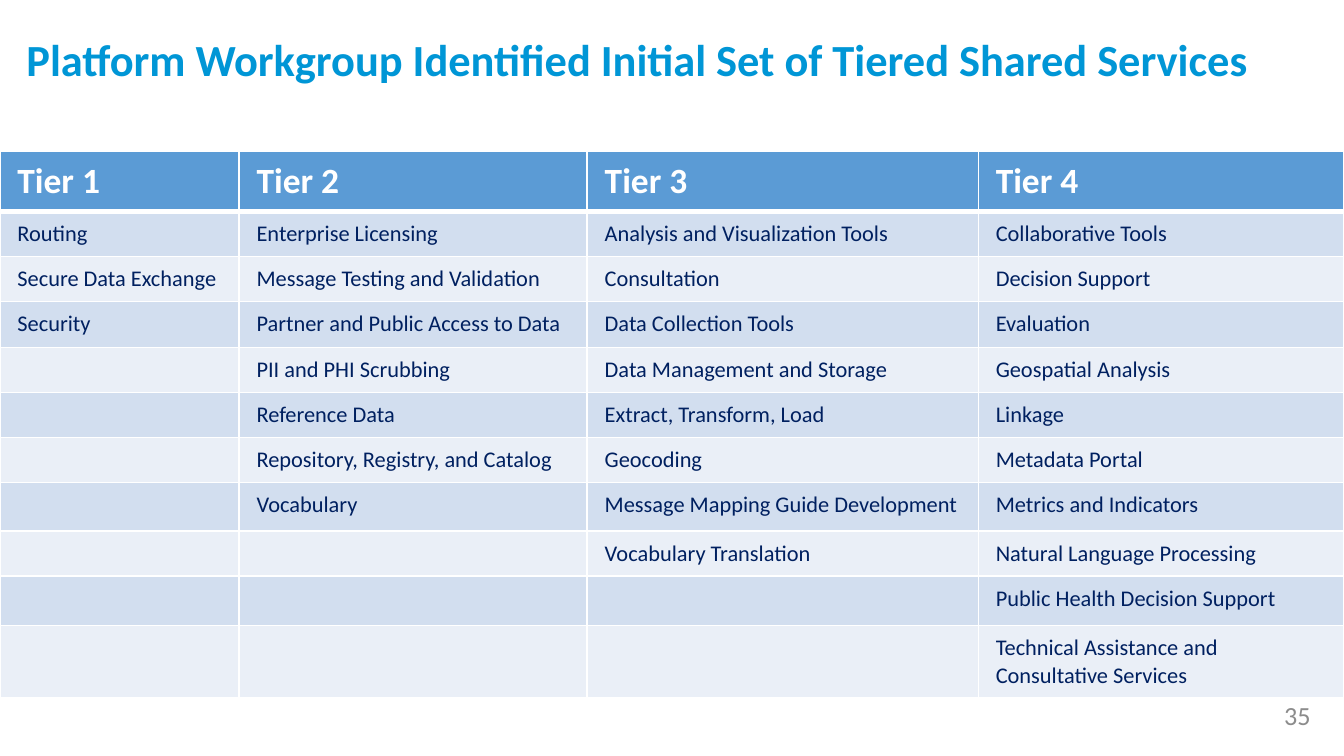
from itertools import zip_longest

from lxml import etree
from pptx import Presentation
from pptx.dml.color import RGBColor
from pptx.enum.shapes import MSO_SHAPE
from pptx.enum.text import MSO_ANCHOR, PP_ALIGN
from pptx.oxml.ns import qn
from pptx.util import Cm, Pt

FONT = "Calibri"
WHITE, BLUE, NAVY, GREY = "FFFFFF", "0096D6", "002060", "8C8C8C"
HEADER, BANDS = "5B9BD5", ("D2DEEF", "EAEFF7")

TIERS = {
    "Tier 1": ["Routing", "Secure Data Exchange", "Security"],
    "Tier 2": [
        "Enterprise Licensing", "Message Testing and Validation",
        "Partner and Public Access to Data", "PII and PHI Scrubbing",
        "Reference Data", "Repository, Registry, and Catalog", "Vocabulary",
    ],
    "Tier 3": [
        "Analysis and Visualization Tools", "Consultation",
        "Data Collection Tools", "Data Management and Storage",
        "Extract, Transform, Load", "Geocoding",
        "Message Mapping Guide Development", "Vocabulary Translation",
    ],
    "Tier 4": [
        "Collaborative Tools", "Decision Support", "Evaluation",
        "Geospatial Analysis", "Linkage", "Metadata Portal",
        "Metrics and Indicators", "Natural Language Processing",
        "Public Health Decision Support",
        "Technical Assistance and Consultative Services",
    ],
}
COL_WIDTHS = (4.52, 6.58, 7.39, 6.91)
ROW_HEIGHTS = (1.13, 0.85, 0.85, 0.87, 0.85, 0.85, 0.85, 0.91, 0.85, 0.94, 1.36)


def rgb(color):
    return RGBColor.from_string(color)


def write(tf, text, size, color, bold=False, align=PP_ALIGN.LEFT, spacing=None):
    tf.word_wrap = True
    p = tf.paragraphs[0]
    p.alignment = align
    if spacing:
        p.line_spacing = Pt(spacing)
    if not text:
        # An empty cell still needs its text size, or its row grows.
        etree.SubElement(p._p, qn("a:endParaRPr"), sz=str(size * 100))
        return
    r = p.add_run()
    r.text = text
    r.font.name = FONT
    r.font.size = Pt(size)
    r.font.bold = bold
    r.font.color.rgb = rgb(color)


def set_borders(cell, top=1, bottom=1):
    """Draw white borders; must run before the cell is filled."""
    tcPr = cell._tc.get_or_add_tcPr()
    for side, width in (("L", 1), ("R", 1), ("T", top), ("B", bottom)):
        ln = etree.SubElement(tcPr, qn(f"a:ln{side}"), w=str(Pt(width)))
        fill = etree.SubElement(ln, qn("a:solidFill"))
        etree.SubElement(fill, qn("a:srgbClr"), val=WHITE)


def add_title(slide, left, top, width, height):
    sp = slide.shapes.add_shape(MSO_SHAPE.RECTANGLE, left, top, width, height)
    sp.shadow.inherit = False
    sp.fill.solid()
    sp.fill.fore_color.rgb = rgb(WHITE)
    sp.line.fill.background()
    sp.text_frame.vertical_anchor = MSO_ANCHOR.BOTTOM
    write(sp.text_frame,
          "Platform Workgroup Identified Initial Set of Tiered Shared Services",
          23.8, BLUE, bold=True, spacing=30)


def add_tier_table(slide, left, top, width, height):
    rows = [tuple(TIERS), *zip_longest(*TIERS.values(), fillvalue="")]
    table = slide.shapes.add_table(
        len(rows), len(TIERS), left, top, width, height).table
    for col, w in zip(table.columns, COL_WIDTHS):
        col.width = Cm(w)
    for row, h in zip(table.rows, ROW_HEIGHTS):
        row.height = Cm(h)
    for i, texts in enumerate(rows):
        is_header = i == 0
        for j, text in enumerate(texts):
            cell = table.cell(i, j)
            cell.margin_left = cell.margin_right = Cm(0.33)
            cell.margin_top = cell.margin_bottom = Cm(0.17)
            set_borders(cell, top=3 if i == 1 else 1, bottom=3 if is_header else 1)
            cell.fill.solid()
            cell.fill.fore_color.rgb = rgb(HEADER if is_header else BANDS[(i - 1) % 2])
            write(cell.text_frame, text, 19 if is_header else 12,
                  WHITE if is_header else NAVY, bold=is_header)


def add_page_number(slide, left, top, width, height):
    sp = slide.shapes.add_textbox(left, top, width, height)
    write(sp.text_frame, "35", 14, GREY, align=PP_ALIGN.RIGHT)


def main():
    prs = Presentation()
    prs.slide_width, prs.slide_height = Cm(25.4), Cm(14.28)
    slide = prs.slides.add_slide(prs.slide_layouts[6])
    add_page_number(slide, Cm(19.3), Cm(13.08), Cm(5.72), Cm(0.76))
    add_title(slide, Cm(0.25), Cm(0), Cm(24.77), Cm(1.73))
    add_tier_table(slide, Cm(0), Cm(2.85), Cm(sum(COL_WIDTHS)), Cm(sum(ROW_HEIGHTS)))
    prs.save("out.pptx")


if __name__ == "__main__":
    main()
